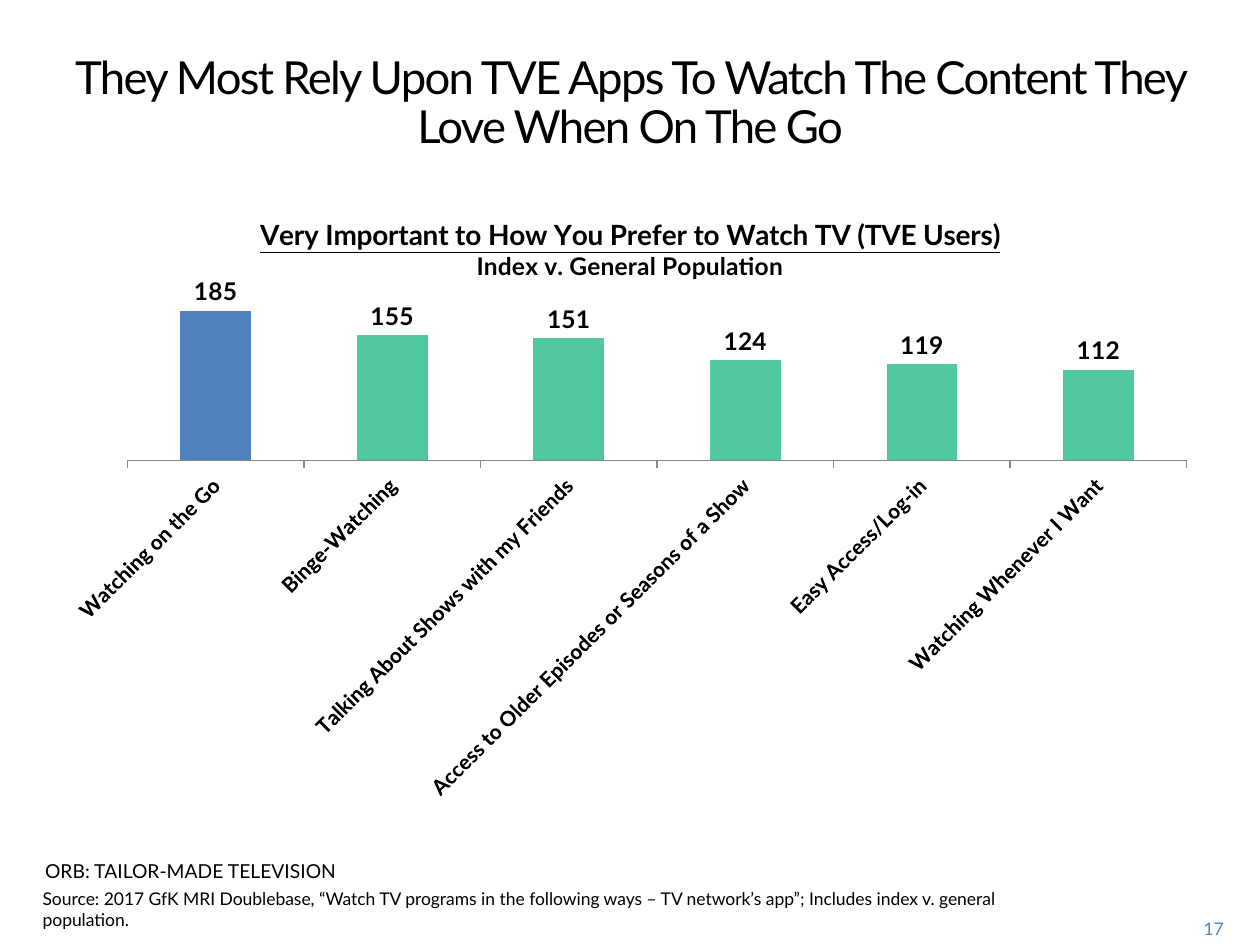
from pptx import Presentation
from pptx.chart.data import CategoryChartData
from pptx.dml.color import RGBColor
from pptx.enum.chart import XL_CHART_TYPE, XL_LABEL_POSITION, XL_TICK_MARK
from pptx.enum.text import PP_ALIGN
from pptx.util import Cm, Pt

HUES = {"text": "000000", "page": "508ABA", "bar": "50C8A0",
        "lead": "4F81BD", "axis": "868686"}
WAYS = {
    "Watching on the Go": 185,
    "Binge-Watching": 155,
    "Talking About Shows with my Friends": 151,
    "Access to Older Episodes or Seasons of a Show": 124,
    "Easy Access/Log-in": 119,
    "Watching Whenever I Want": 112,
}


class Deck:
    """Hold the style and the current slide, and add elements to it."""

    def __init__(self, face):
        self.face = face
        self.file = Presentation()
        self.file.slide_width, self.file.slide_height = Cm(25.4), Cm(19.05)
        self.slide = self.file.slides.add_slide(self.file.slide_layouts[6])

    def hue(self, name):
        return RGBColor.from_string(HUES[name])

    def style(self, font, size, bold=False, hue="text"):
        font.name, font.size, font.bold = self.face, Pt(size), bold
        font.color.rgb = self.hue(hue)

    def paint(self, item, hue):
        item.format.fill.solid()
        item.format.fill.fore_color.rgb = self.hue(hue)

    def text(self, words, box, size, hue="text", align=PP_ALIGN.LEFT,
             pitch=None, track=None):
        frame = self.slide.shapes.add_textbox(*map(Cm, box)).text_frame
        frame.word_wrap = True
        para = frame.paragraphs[0]
        run = para.add_run()
        run.text = words
        para.alignment = align
        if pitch:
            para.line_spacing = Pt(pitch)
        if track:
            run.font._element.set("spc", str(track))
        self.style(para.font, size, hue=hue)

    def chart(self, ways, heads, box):
        data = CategoryChartData()
        data.categories = list(ways)
        data.add_series("Series 1", list(ways.values()))
        chart = self.slide.shapes.add_chart(
            XL_CHART_TYPE.COLUMN_CLUSTERED, *map(Cm, box), data).chart
        self.style(chart.font, 18)
        chart.has_legend = False
        self.heading(chart, heads)
        self.axes(chart)
        self.bars(chart.plots[0])

    def heading(self, chart, heads):
        frame = chart.chart_title.text_frame
        chart.chart_title.include_in_layout = False
        for spot, (words, size, line) in enumerate(heads):
            para = frame.add_paragraph() if spot else frame.paragraphs[0]
            run = para.add_run()
            run.text = words
            self.style(run.font, size, True)
            run.font.underline = line

    def axes(self, chart):
        chart.value_axis.visible = False
        chart.value_axis.has_major_gridlines = False
        chart.value_axis.minimum_scale = 0
        axis = chart.category_axis
        axis.major_tick_mark = XL_TICK_MARK.OUTSIDE
        axis.format.line.color.rgb = self.hue("axis")
        self.style(axis.tick_labels.font, 12, True)
        axis._element.xpath("c:txPr/a:bodyPr")[0].set("rot", "-2700000")

    def bars(self, plot):
        plot.gap_width = 150
        plot.vary_by_categories = False
        bars = plot.series[0]
        self.paint(bars, "bar")
        self.paint(bars.points[0], "lead")
        tags = bars.data_labels
        tags.show_value = True
        tags.position = XL_LABEL_POSITION.OUTSIDE_END
        self.style(tags.font, 14, True)


def main():
    deck = Deck("Lato")
    deck.text("17", (23.37, 18.39, 1.55, 0.64), 10, "page", PP_ALIGN.RIGHT)
    deck.text("They Most Rely Upon TVE Apps To Watch The Content They "
              "Love When On The Go", (1.02, 0.97, 23.37, 1.85), 26,
              align=PP_ALIGN.CENTER, pitch=28, track=-100)
    deck.text("Source: 2017 GfK MRI Doublebase, “Watch TV programs in the "
              "following ways – TV network’s app”; Includes index v. general "
              "population.", (0.61, 17.78, 19.91, 1.12), 10)
    deck.text("ORB: TAILOR-MADE TELEVISION", (0.66, 17.2, 7.82, 1.19), 11)
    heads = [("Very Important to How You Prefer to Watch TV (TVE Users)", 16, True),
             ("Index v. General Population", 14, False)]
    deck.chart(WAYS, heads, (1.02, 3.89, 23.37, 12.22))
    deck.file.save("out.pptx")


if __name__ == "__main__":
    main()
